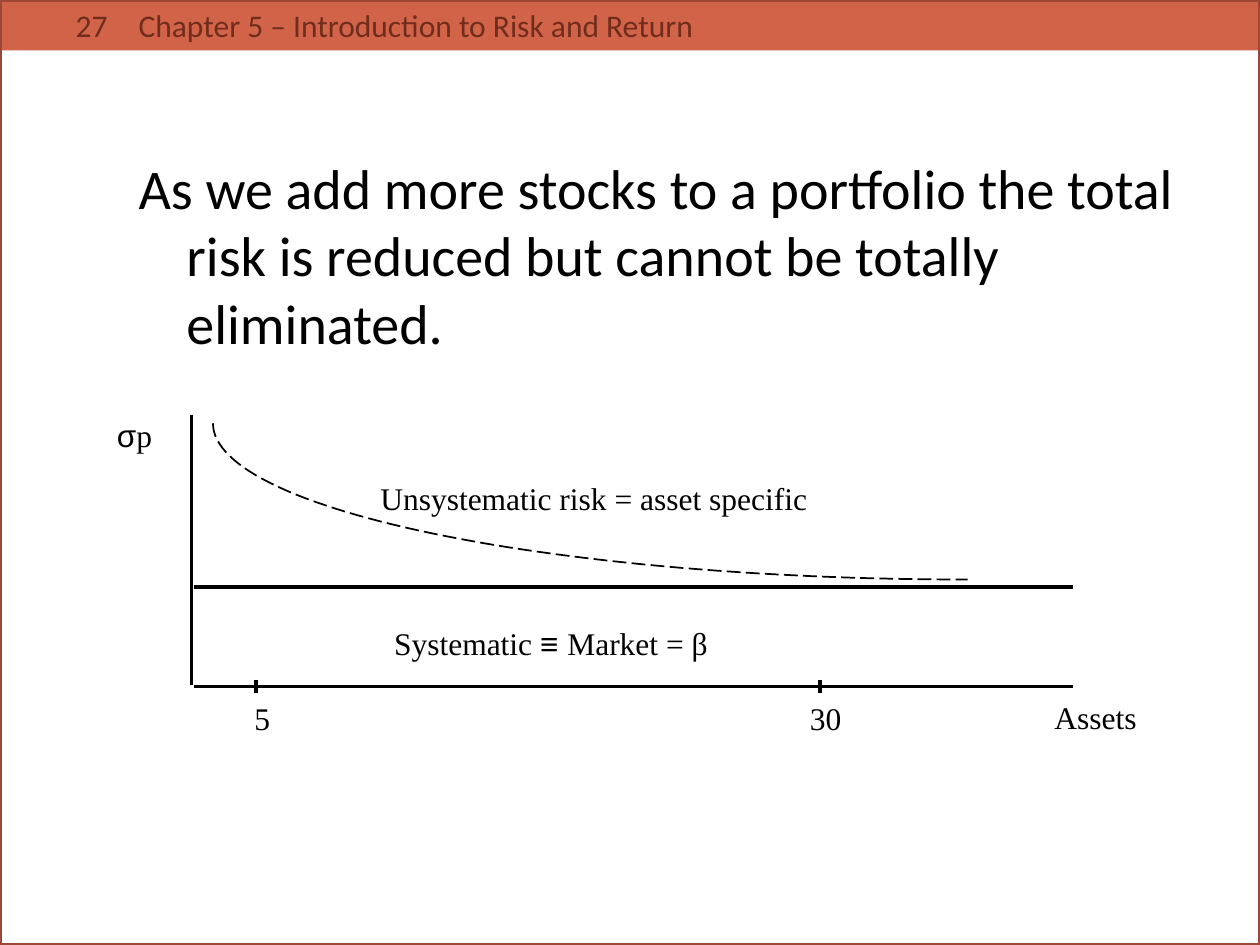
from dataclasses import dataclass
from math import cos, pi, sin

from lxml import etree
from pptx import Presentation
from pptx import util as u
from pptx.dml.color import RGBColor
from pptx.enum import dml, shapes, text
from pptx.oxml import ns

PX = 9144


@dataclass(frozen=True)
class Theme:
    bar: str = "D16349"
    edge: str = "9B4936"
    head: str = "712D1C"
    ink: str = "000000"
    sans: str = "Calibri"
    serif: str = "Times New Roman"
    sign: str = "Arial"
    small: int = 18
    big: int = 32
    thick: float = 2
    thin: float = 1
    rim: float = 2.08


T = Theme()


def px(*vals):
    return [u.Emu(v * PX) for v in vals]


def place(shape, box):
    shape.left, shape.top, shape.width, shape.height = px(*box)


def stroke(line, tint, size):
    line.color.rgb = RGBColor.from_string(tint)
    line.width = u.Pt(size)


def add_run(par, words, face, size, tint):
    run = par.add_run()
    run.text = words
    run.font.name = face
    run.font.size = u.Pt(size)
    run.font.color.rgb = RGBColor.from_string(tint)


def add_rect(slide, box):
    rect = slide.shapes.add_shape(shapes.MSO_SHAPE.RECTANGLE, *px(*box))
    rect.shadow.inherit = False
    return rect


def add_line(group, x1, y1, x2, y2):
    line = group.shapes.add_connector(
        shapes.MSO_CONNECTOR.STRAIGHT, *px(x1, y1, x2, y2))
    stroke(line.line, T.ink, T.thick)
    etree.SubElement(line._element.spPr, ns.qn("a:effectLst"))


def add_label(group, box, *parts):
    label = group.shapes.add_textbox(*px(*box))
    label.text_frame.word_wrap = False
    for words, face in parts:
        add_run(label.text_frame.paragraphs[0], words, face, T.small, T.ink)


def add_curve(group, x, y, wide, high, steps=60):
    turns = [pi / 2 * i / steps for i in range(steps + 1)]
    dots = [(round((x + wide * (1 - cos(t))) * PX),
             round((y + high * sin(t)) * PX)) for t in turns]
    pen = group.shapes.build_freeform(*dots[0], scale=1.0)
    pen.add_line_segments(dots[1:], close=False)
    curve = pen.convert_to_shape()
    curve.shadow.inherit = False
    curve.fill.background()
    stroke(curve.line, T.ink, T.thin)
    curve.line.dash_style = dml.MSO_LINE.LONG_DASH


def draw_head(slide, box):
    bar = add_rect(slide, box)
    bar.fill.solid()
    bar.fill.fore_color.rgb = RGBColor.from_string(T.bar)
    bar.line.fill.background()
    slide.shapes._spTree.insert(2, bar._element)

    title = slide.shapes.title
    place(title, box)
    frame = title.text_frame
    frame.auto_size = text.MSO_AUTO_SIZE.NONE
    frame.vertical_anchor = text.MSO_ANCHOR.TOP
    par = frame.paragraphs[0]
    par.alignment = text.PP_ALIGN.LEFT
    par._p.get_or_add_pPr().set("marL", str(50 * PX))
    add_run(par, "27\tChapter 5 – Introduction to Risk and Return",
            T.sans, T.small, T.head)


def draw_rim(slide, box):
    rim = add_rect(slide, box)
    rim.fill.background()
    stroke(rim.line, T.edge, T.rim)


def draw_body(slide, box):
    body = slide.placeholders[1]
    place(body, box)
    body.text_frame.auto_size = text.MSO_AUTO_SIZE.NONE
    par = body.text_frame.paragraphs[0]
    prop = par._p.get_or_add_pPr()
    prop.set("marL", str(38 * PX))
    prop.set("indent", str(-38 * PX))
    etree.SubElement(prop, ns.qn("a:buNone"))
    add_run(par, "As we add more stocks to a portfolio the total risk is "
            "reduced but cannot be totally eliminated.",
            T.sans, T.big, T.ink)


def draw_graph(slide, box):
    x, y, wide, high = box
    base = y + high
    group = slide.shapes.add_group_shape()
    add_line(group, x, y, x, base - 1)
    for level in (base, base - 79):
        add_line(group, x + 2, level, x + wide, level)
    add_curve(group, x + 17, y + 7, 599, 124)
    for count, left, gap, span in (("5", 51, 11, 36), ("30", 499, 18, 53)):
        add_line(group, x + left, base - 5, x + left, base + 5)
        add_label(group, (x + left - gap, base + 5, span, 50),
                  (count, T.serif))
    add_label(group, (x + 675, base + 4, 107, 50), ("Assets", T.serif))
    add_label(group, (x + 151, base - 55, 270, 40),
              ("Systematic ", T.serif), ("≡ ", T.sign),
              ("Market = β", T.serif))
    add_label(group, (x - 69, y - 4, 57, 50), ("σ", T.sign), ("p", T.serif))
    add_label(slide, (x + 140, y + 46, 375, 40),
              ("Unsystematic risk = asset specific", T.serif))


def main():
    deck = Presentation()
    deck.slide_width, deck.slide_height = px(1000, 750)
    slide = deck.slides.add_slide(deck.slide_layouts[1])
    draw_head(slide, (0, 0, 1000, 40))
    draw_rim(slide, (0, 0, 1000, 750))
    draw_body(slide, (100, 117, 850, 175))
    draw_graph(slide, (152, 329, 700, 216))
    deck.save("out.pptx")


if __name__ == "__main__":
    main()
